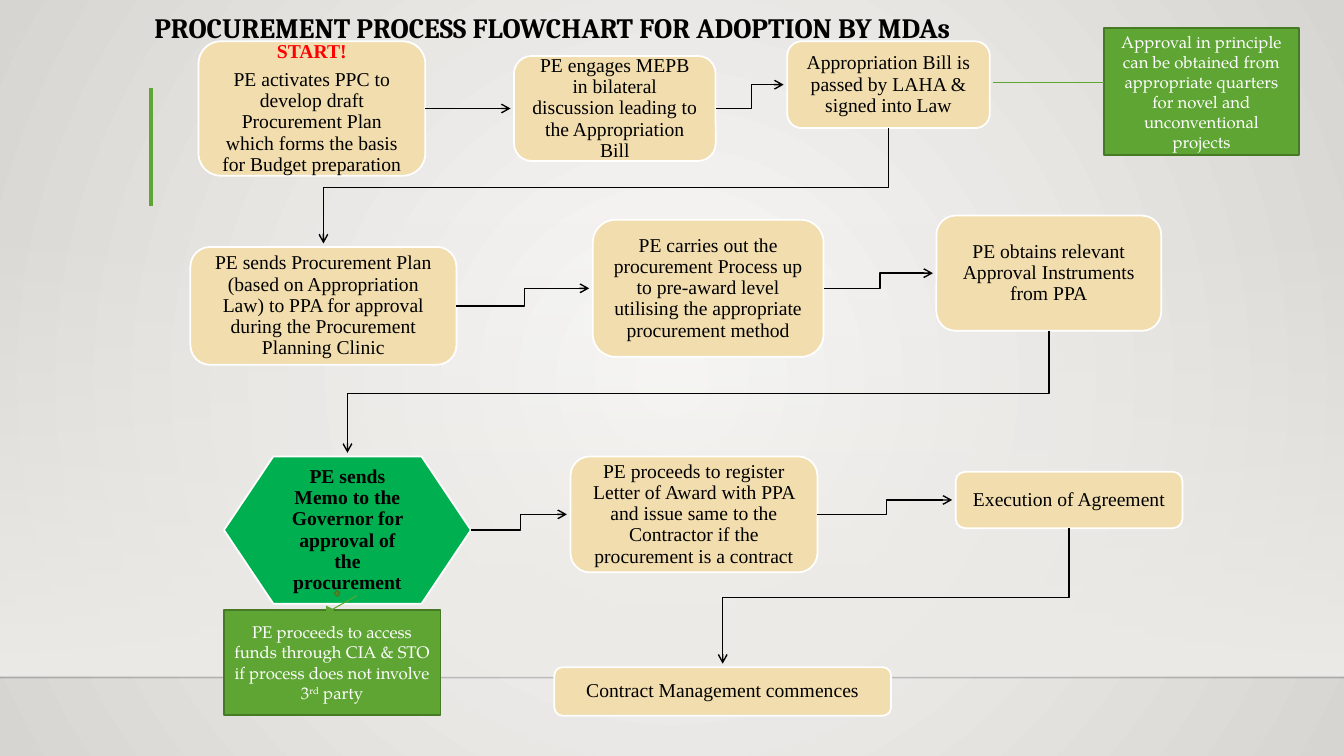
from lxml import etree
from pptx import Presentation
from pptx.dml.color import RGBColor
from pptx.enum.shapes import MSO_CONNECTOR, MSO_SHAPE
from pptx.enum.text import MSO_ANCHOR, PP_ALIGN
from pptx.oxml import parse_xml
from pptx.oxml.ns import nsdecls, qn
from pptx.util import Pt

STRAIGHT = MSO_CONNECTOR.STRAIGHT
RECT = MSO_SHAPE.RECTANGLE
ROUNDED = MSO_SHAPE.ROUNDED_RECTANGLE
HEXAGON = MSO_SHAPE.FLOWCHART_PREPARATION
DOWN_ARROW = MSO_SHAPE.DOWN_ARROW
TOP, MIDDLE = MSO_ANCHOR.TOP, MSO_ANCHOR.MIDDLE
LEFT, CENTER = PP_ALIGN.LEFT, PP_ALIGN.CENTER

BLACK, WHITE, RED = "000000", "FFFFFF", "FF0000"
SAND, HEX_GREEN = "F1DDAE", "00B050"
GREEN, DARK_GREEN = "5FA534", "467A26"
SERIF, PALATINO = "Times New Roman", "TeX Gyre Pagella"
ARROW_GAP, BEND_SHIFT = 2.5, 1.25

ROWS = [
    ((136, 29.5), [
        (5.8, 0, 162, 96, ROUNDED, ["START!", "PE activates PPC to develop draft Procurement Plan which forms the basis for Budget preparation"]),
        (231.2, 10.5, 144, 75, ROUNDED, ["PE engages MEPB in bilateral discussion leading to the Appropriation Bill"]),
        (426.3, 0, 144.7, 62, ROUNDED, ["Appropriation Bill is passed by LAHA & signed into Law"]),
    ]),
    ((136, 154), [
        (0, 22.4, 190.1, 84.2, ROUNDED, ["PE sends Procurement Plan (based on Appropriation Law) to PPA for approval during the Procurement Planning Clinic"]),
        (287.4, 3, 164.9, 97.9, ROUNDED, ["PE carries out the procurement Process up to pre-award level utilising the appropriate procurement method"]),
        (532.9, 0, 160.6, 82.3, ROUNDED, ["PE obtains relevant Approval Instruments from PPA"]),
    ]),
    ((160, 326), [
        (0, 0, 176.4, 105.2, HEXAGON, ["PE sends Memo to the Governor for approval of the procurement"]),
        (247.5, 0, 176.4, 82.8, ROUNDED, ["PE proceeds to register Letter of Award with PPA and issue same to the Contractor if the procurement is a contract"]),
        (522.6, 11, 162, 40.3, ROUNDED, ["Execution of Agreement"]),
    ]),
    ((396, 476.6), [
        (0, 0, 240.5, 34.6, ROUNDED, ["Contract Management commences"]),
    ]),
]


def rgb(color):
    return RGBColor.from_string(color)


def add_text(p, text, font=SERIF, size=14, color=BLACK, bold=False):
    r = p.add_run()
    r.text = text
    r.font.name = font
    r.font.size = Pt(size)
    r.font.bold = bold
    r.font.color.rgb = rgb(color)


def set_line(sp, color, width, head=None):
    sp.line.color.rgb = rgb(color)
    sp.line.width = Pt(width)
    if head:
        ln = sp.element.find(".//" + qn("a:ln"))
        etree.SubElement(ln, qn("a:tailEnd")).set("type", head)


def set_gradient(solid, stops, direction):
    gs = "".join(
        f'<a:gs pos="{pos}"><a:srgbClr val="{color}"><a:alpha val="{alpha}"/></a:srgbClr></a:gs>'
        for pos, color, alpha in stops)
    xml = f'<a:gradFill {nsdecls("a")} rotWithShape="1"><a:gsLst>{gs}</a:gsLst>{direction}</a:gradFill>'
    solid.getparent().replace(solid, parse_xml(xml))


def add_box(s, kind, x, y, w, h, fill, line=None, width=1.25):
    sp = s.shapes.add_shape(kind, Pt(x), Pt(y), Pt(w), Pt(h))
    sp.shadow.inherit = False
    sp.fill.solid()
    sp.fill.fore_color.rgb = rgb(fill)
    if line:
        set_line(sp, line, width)
    else:
        sp.line.fill.background()
    return sp


def add_line(s, x1, y1, x2, y2, color, width, head=None):
    c = s.shapes.add_connector(STRAIGHT, Pt(x1), Pt(y1), Pt(x2), Pt(y2))
    set_line(c, color, width, head)
    etree.SubElement(c.element.spPr, qn("a:effectLst"))
    return c


def draw_backdrop(s, w, h):
    s.background.fill.solid()
    solid = s.element.find(".//" + qn("p:bgPr")).find(qn("a:solidFill"))
    set_gradient(solid, [(0, "FAFAF9", 100000), (100000, "D7D5D2", 100000)],
                 '<a:path path="circle"><a:fillToRect l="50000" t="50000" r="50000" b="50000"/></a:path>')
    floor = h - 56
    band = add_box(s, RECT, 0, floor - 325.6, w, 324, "EDEBE7")
    set_gradient(band.element.spPr.find(qn("a:solidFill")),
                 [(0, "EDEBE7", 0), (100000, "EDEBE7", 100000)], '<a:lin ang="5400000" scaled="0"/>')
    edge = add_line(s, 0, floor, w, floor, "000001", 1)
    clr = edge.element.find(".//" + qn("a:srgbClr"))
    etree.SubElement(clr, qn("a:alpha")).set("val", "20000")
    add_line(s, 108, 62.6, 108, 146.9, GREEN, 3)


def draw_title(s, x, y, w, h):
    title = s.shapes.title
    title.left, title.top, title.width, title.height = Pt(x), Pt(y), Pt(w), Pt(h)
    tf = title.text_frame
    tf.word_wrap = True
    tf.vertical_anchor = TOP
    p = tf.paragraphs[0]
    p.alignment = LEFT
    add_text(p, "PROCUREMENT PROCESS FLOWCHART FOR ADOPTION BY MDAs", font="Cambria", size=20, bold=True)


def draw_step(s, x, y, w, h, kind, texts):
    is_hexagon = kind == HEXAGON
    sp = add_box(s, kind, x, y, w, h, HEX_GREEN if is_hexagon else SAND, WHITE)
    tf = sp.text_frame
    tf.word_wrap = True
    tf.vertical_anchor = MIDDLE
    tf.margin_left = tf.margin_right = tf.margin_top = tf.margin_bottom = Pt(7.84)
    for i, text in enumerate(texts):
        p = tf.paragraphs[0] if i == 0 else tf.add_paragraph()
        p.alignment = CENTER
        p.line_spacing = 0.9
        p.space_after = Pt(4.9)
        is_start = text == "START!"
        add_text(p, text, color=RED if is_start else BLACK, bold=is_start or is_hexagon)


def draw_arrow(s, source, target):
    x1, y1, w1, h1 = source
    x2, y2, w2, h2 = target
    if x2 > x1:
        start, end = (x1 + w1, y1 + h1 / 2), (x2 - ARROW_GAP, y2 + h2 / 2)
        bend = (start[0] + end[0]) / 2 + BEND_SHIFT
        turns = [(bend, start[1]), (bend, end[1])]
    else:
        start, end = (x1 + w1 / 2, y1 + h1), (x2 + w2 / 2, y2 - ARROW_GAP)
        bend = (start[1] + end[1]) / 2 + BEND_SHIFT
        turns = [(start[0], bend), (end[0], bend)]
    if abs(start[1] - end[1]) < 1:
        add_line(s, *start, end[0], start[1], BLACK, 1, "arrow")
        return
    fb = s.shapes.build_freeform(Pt(start[0]), Pt(start[1]))
    fb.add_line_segments([(Pt(x), Pt(y)) for x, y in turns + [end]], close=False)
    sp = fb.convert_to_shape()
    sp.shadow.inherit = False
    sp.fill.background()
    set_line(sp, BLACK, 1, "arrow")


def draw_flow(s, rows):
    boxes = []
    for (left, top), steps in rows:
        for dx, dy, w, h, kind, texts in steps:
            box = (left + dx, top + dy, w, h)
            if boxes:
                draw_arrow(s, boxes[-1], box)
            draw_step(s, *box, kind, texts)
            boxes.append(box)


def draw_note(s, x, y, w, h, *parts):
    sp = add_box(s, RECT, x, y, w, h, GREEN, DARK_GREEN)
    tf = sp.text_frame
    tf.word_wrap = True
    tf.vertical_anchor = MIDDLE
    p = tf.paragraphs[0]
    p.alignment = CENTER
    for part in parts:
        add_text(p, part, font=PALATINO, size=12, color=WHITE)
    return sp


def draw_funds_note(s, x, y, w, h):
    sp = draw_note(s, x, y, w, h, "PE proceeds to access funds through CIA & STO if process does not involve 3", "rd", " party")
    sp.element.findall(".//" + qn("a:rPr"))[1].set("baseline", "30000")
    add_line(s, x + 77, y, x + 79.2, y, GREEN, 0.75, "triangle")
    marker = add_box(s, DOWN_ARROW, x + 79.2, y - 13.7, 3.6, 3.6, GREEN, DARK_GREEN)
    marker.element.spPr.find(qn("a:xfrm")).set("flipV", "1")
    add_line(s, x + 95, y - 10, x + 77, y, GREEN, 0.75)


def draw_approval_note(s, x, y, w, h):
    draw_note(s, x, y, w, h, "Approval in principle can be obtained from appropriate quarters for novel and unconventional projects")
    add_line(s, x - 79.2, y + 38.8, x, y + 38.8, GREEN, 0.75)


def main():
    prs = Presentation()
    prs.slide_width, prs.slide_height = Pt(960), Pt(540)
    s = prs.slides.add_slide(prs.slide_layouts[5])
    draw_backdrop(s, 960, 540)
    draw_title(s, 103, 3.6, 774, 31.7)
    draw_flow(s, ROWS)
    draw_funds_note(s, 159.8, 435.6, 154.8, 75)
    draw_approval_note(s, 788.4, 20.2, 139.7, 90.7)
    prs.save("out.pptx")


if __name__ == "__main__":
    main()
